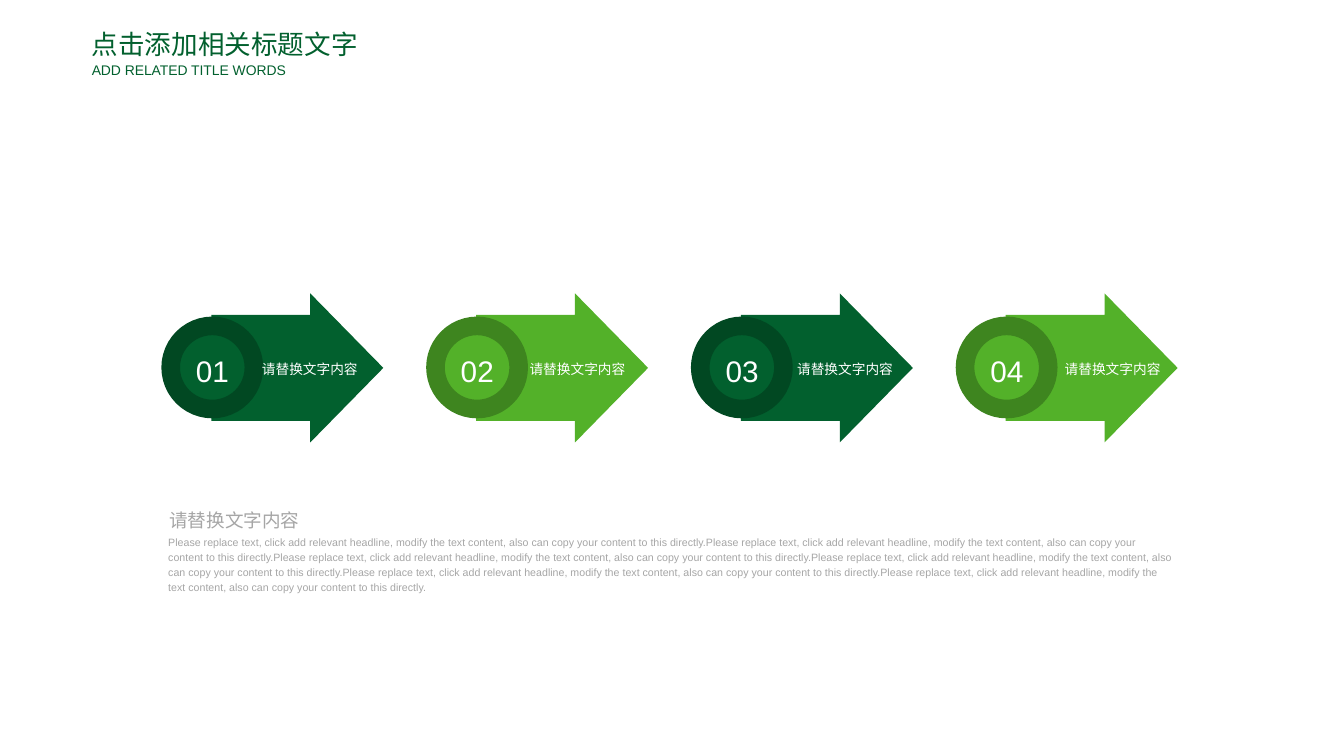
from dataclasses import dataclass

from pptx import Presentation
from pptx.dml.color import RGBColor
from pptx.enum.shapes import MSO_SHAPE as Preset
from pptx.enum.text import MSO_ANCHOR as Anchor, MSO_AUTO_SIZE as AutoSize, PP_ALIGN as Align
from pptx.util import Inches, Pt

SLIDE_W, SLIDE_H = Inches(14.06), Inches(7.91)


@dataclass(frozen=True)
class Theme:
    font: str = "Arial"
    green: str = "02602E"
    green_ring: str = "014822"
    lime: str = "53B129"
    lime_ring: str = "3E851F"
    grey: str = "A6A6A6"
    white: str = "FFFFFF"
    title: float = 20
    subtitle: float = 10.5
    number: float = 22.4
    label: float = 10.3
    heading: float = 14
    body: float = 8
    ring: float = 14


@dataclass(frozen=True)
class Box:
    """A rectangle in percent of the slide's width and height."""
    x: float
    y: float
    w: float
    h: float

    def shift(self, dx: float) -> "Box":
        return Box(self.x + dx, self.y, self.w, self.h)

    def emu(self) -> tuple[int, int, int, int]:
        return (int(SLIDE_W * self.x / 100), int(SLIDE_H * self.y / 100),
                int(SLIDE_W * self.w / 100), int(SLIDE_H * self.h / 100))


@dataclass(frozen=True)
class Step:
    number: str
    label: str
    fill: str
    ring: str


T = Theme()
LABEL = "请替换文字内容"
SENTENCE = ("Please replace text, click add relevant headline, modify the text content, "
            "also can copy your content to this directly.")
STEPS = [
    Step("01", LABEL, T.green, T.green_ring),
    Step("02", LABEL, T.lime, T.lime_ring),
    Step("03", LABEL, T.green, T.green_ring),
    Step("04", LABEL, T.lime, T.lime_ring),
]

# First step of the row; labels are spaced slightly wider than arrows
ARROW = Box(15.72, 38.81, 12.8, 19.72)
DISC = Box(12.7, 43.11, 6.19, 11)
NUMBER = Box(14.58, 46.02, 2.49, 5.18)
STEP_LABEL = Box(19.49, 46.52, 7.25, 4.17)
STEP_PITCH, LABEL_PITCH = 19.7, 19.91


def write(sp, text: str, size: float, color: str, spacing: float = 1.2,
          anchor: Anchor = Anchor.MIDDLE, wrap: bool = True) -> None:
    tf = sp.text_frame
    tf.auto_size = AutoSize.NONE
    tf.word_wrap = wrap
    tf.vertical_anchor = anchor
    tf.margin_left = tf.margin_right = tf.margin_top = tf.margin_bottom = 0
    p = tf.paragraphs[0]
    p.alignment = Align.LEFT
    p.line_spacing = spacing
    r = p.add_run()
    r.text = text
    r.font.name = T.font
    r.font.size = Pt(size)
    r.font.color.rgb = RGBColor.from_string(color)


def add_text(s, box: Box, text: str, size: float, color: str, **layout) -> None:
    write(s.shapes.add_textbox(*box.emu()), text, size, color, **layout)


def add_shape(s, preset: Preset, box: Box, fill: str):
    sp = s.shapes.add_shape(preset, *box.emu())
    sp.shadow.inherit = False
    sp.fill.solid()
    sp.fill.fore_color.rgb = RGBColor.from_string(fill)
    sp.line.fill.background()
    return sp


def add_step(s, i: int, step: Step) -> None:
    dx = i * STEP_PITCH
    arrow = add_shape(s, Preset.RIGHT_ARROW, ARROW.shift(dx), step.fill)
    arrow.adjustments[0], arrow.adjustments[1] = 0.71, 0.49
    disc = add_shape(s, Preset.OVAL, DISC.shift(dx), step.fill)
    disc.line.color.rgb = RGBColor.from_string(step.ring)
    disc.line.width = Pt(T.ring)
    add_text(s, STEP_LABEL.shift(i * LABEL_PITCH), step.label, T.label, T.white)
    add_text(s, NUMBER.shift(dx), step.number, T.number, T.white, wrap=False)


def main() -> None:
    prs = Presentation()
    prs.slide_width, prs.slide_height = SLIDE_W, SLIDE_H
    s = prs.slides.add_slide(prs.slide_layouts[5])

    # Title and subtitle
    title = s.shapes.title
    title.left, title.top, title.width, title.height = Box(6.83, 3.67, 19.91, 4.3).emu()
    write(title, "点击添加相关标题文字", T.title, T.green,
          spacing=1.0, anchor=Anchor.TOP, wrap=False)
    add_text(s, Box(6.83, 8.09, 14.79, 2.28), "ADD RELATED TITLE WORDS", T.subtitle, T.green,
             spacing=1.0, anchor=Anchor.TOP, wrap=False)

    # Row of numbered arrows
    for i, step in enumerate(STEPS):
        add_step(s, i, step)

    # Explanation below the row
    add_text(s, Box(12.59, 66.88, 16.5, 3.29), LABEL, T.heading, T.grey)
    add_text(s, Box(12.52, 70.42, 74.96, 8.22), SENTENCE * 6, T.body, T.grey)

    prs.save("out.pptx")


if __name__ == "__main__":
    main()
